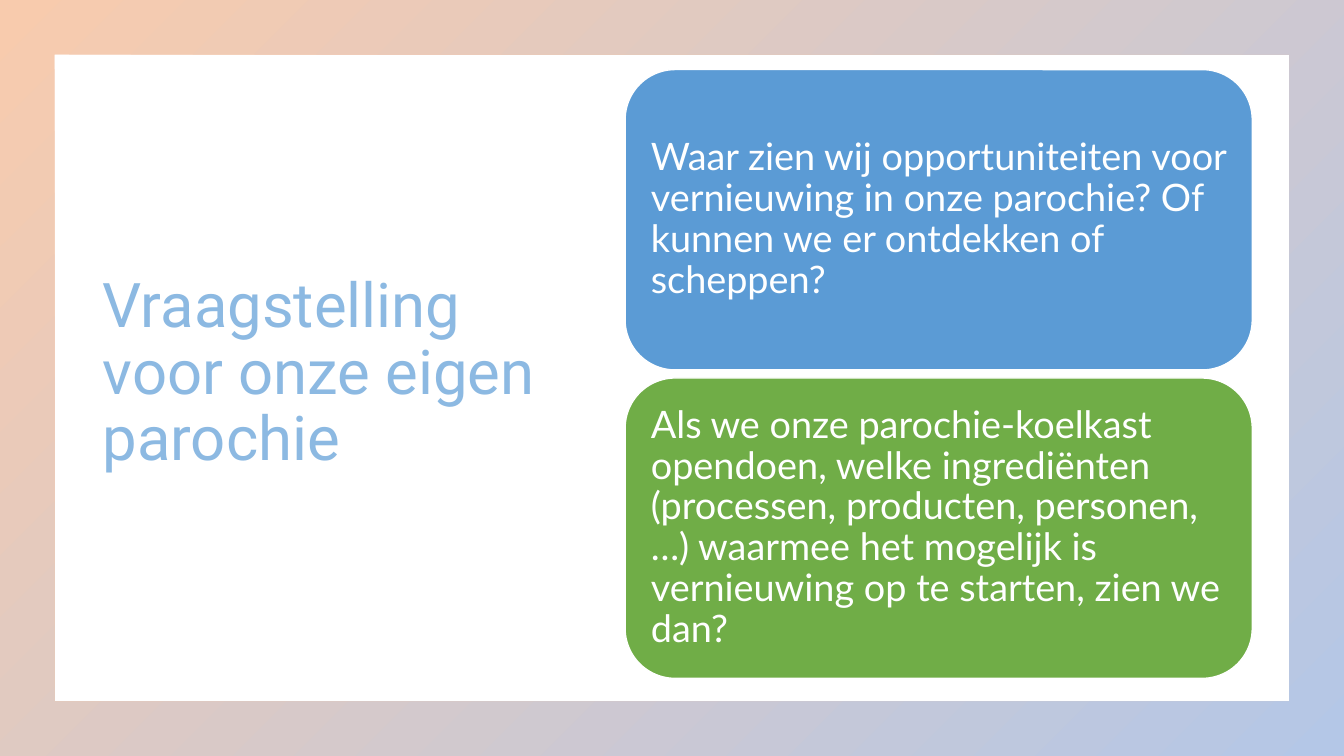
from pptx import Presentation
from pptx.dml.color import RGBColor
from pptx.enum.shapes import MSO_SHAPE
from pptx.enum.text import MSO_ANCHOR, PP_ALIGN
from pptx.util import Inches, Pt

WIDTH, HEIGHT = 13.33, 7.5
WHITE, BLUE, GREEN = "FFFFFF", "5B9BD5", "70AD47"
PEACH, LAVENDER, TITLE_BLUE = "F8CBAD", "B4C7E7", "8CB9E2"

QUESTIONS = [
    ("Waar zien wij opportuniteiten voor vernieuwing in onze parochie? "
     "Of kunnen we er ontdekken of scheppen?", BLUE),
    ("Als we onze parochie-koelkast opendoen, welke ingrediënten "
     "(processen, producten, personen, …) waarmee het mogelijk is "
     "vernieuwing op te starten, zien we dan?", GREEN),
]


def rgb(hex_color):
    return RGBColor.from_string(hex_color)


def apply(target, formats):
    for name, value in formats.items():
        setattr(target, name, value)


class SlideBuilder:
    title_font = {"name": "Roboto", "size": Pt(44)}
    card_font = {"name": "Lato", "size": Pt(27)}
    card_margins = {f"margin_{side}": Inches(0.11)
                    for side in ("left", "top", "right", "bottom")}

    def __init__(self, slide):
        self.slide = slide

    def shape(self, kind, box):
        """Add a preset shape without shadow or outline."""
        shape = self.slide.shapes.add_shape(kind, *map(Inches, box))
        shape.shadow.inherit = False
        shape.line.fill.background()
        return shape

    def set_text(self, holder, text, font, color, margins):
        frame = holder.text_frame
        apply(frame, {"word_wrap": True,
                      "vertical_anchor": MSO_ANCHOR.MIDDLE, **margins})
        paragraph = frame.paragraphs[0]
        apply(paragraph, {"alignment": PP_ALIGN.LEFT, "line_spacing": 0.9})
        run = paragraph.add_run()
        run.text = text
        apply(run.font, font)
        run.font.color.rgb = rgb(color)

    def panel(self, box):
        panel = self.shape(MSO_SHAPE.RECTANGLE, box)
        panel.fill.solid()
        panel.fill.fore_color.rgb = rgb(WHITE)

    def border(self, box, thickness, colors):
        """Add a frame shaded from top left to bottom right."""
        border = self.shape(MSO_SHAPE.FRAME, box)
        border.adjustments[0] = thickness
        border.fill.gradient()
        border.fill.gradient_angle = 315
        for stop, color, position in zip(border.fill.gradient_stops, colors, (0, 1)):
            stop.color.rgb = rgb(color)
            stop.position = position

    def title(self, text, box):
        title = self.slide.shapes.add_textbox(*map(Inches, box))
        self.set_text(title, text, self.title_font, TITLE_BLUE, {})

    def card(self, text, box, color):
        card = self.shape(MSO_SHAPE.ROUNDED_RECTANGLE, box)
        card.fill.solid()
        card.fill.fore_color.rgb = rgb(color)
        card.line.color.rgb = rgb(WHITE)
        card.line.width = Pt(1)
        self.set_text(card, text, self.card_font, WHITE, self.card_margins)


def main():
    presentation = Presentation()
    apply(presentation, {"slide_width": Inches(WIDTH),
                         "slide_height": Inches(HEIGHT)})
    builder = SlideBuilder(
        presentation.slides.add_slide(presentation.slide_layouts[6]))

    whole_slide = (0, 0, WIDTH, HEIGHT)
    builder.panel(whole_slide)
    builder.border(whole_slide, 0.072, (PEACH, LAVENDER))
    builder.title("Vraagstelling voor onze eigen parochie",
                  (0.92, 0.67, 4.86, 6.09))

    card_top, card_height, gap = 0.69, 2.98, 0.08
    for row, (question, color) in enumerate(QUESTIONS):
        top = card_top + row * (card_height + gap)
        builder.card(question, (6.2, top, 6.22, card_height), color)

    presentation.save("out.pptx")


if __name__ == "__main__":
    main()
